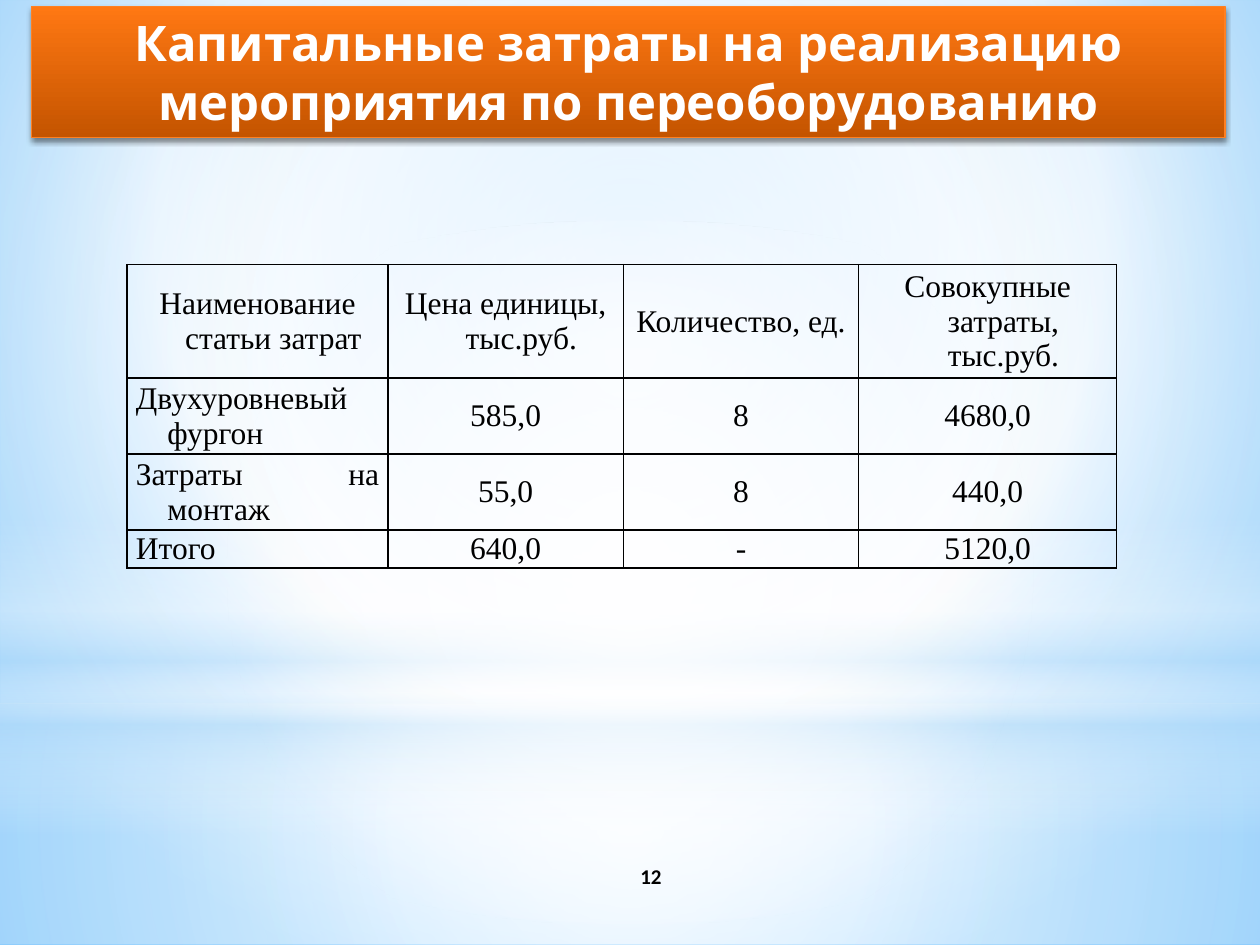
from pptx import Presentation
from pptx.dml.color import RGBColor
from pptx.enum import shapes, text
from pptx.oxml import parse_xml
from pptx.oxml.ns import nsdecls, qn
from pptx.util import Pt

BLACK = RGBColor(0, 0, 0)
WHITE = RGBColor(255, 255, 255)
ORANGE = RGBColor(0xFF, 0x80, 0x21)
FLAME = RGBColor(0xFF, 0x78, 0x13)
RUST = RGBColor(0xC4, 0x54, 0)
SKY = RGBColor(0x9E, 0xD5, 0xFF)
AZURE = RGBColor(0x5B, 0xB9, 0xFF)
PALE = RGBColor(0xB4, 0xDC, 0xFA)

TITLE = "Капитальные затраты на реализацию мероприятия по переоборудованию"
NUMBER = "12"
ROWS = [
    ("Наименование статьи затрат", "Цена единицы, тыс.руб.", "Количество, ед.",
     "Совокупные затраты, тыс.руб."),
    ("Двухуровневый фургон", "585,0", "8", "4680,0"),
    ("Затраты на монтаж", "55,0", "8", "440,0"),
    ("Итого", "640,0", "-", "5120,0"),
]
WIDTHS = (149, 134.5, 134.5, 147.5)
HEIGHTS = (64.5, 43.4, 43.4, 21.2)

DOWN = '<a:lin ang="5400000" scaled="0"/>'
RECT, OVAL = shapes.MSO_SHAPE.RECTANGLE, shapes.MSO_SHAPE.OVAL


def circle(left, top, right, low):
    return (f'<a:path path="circle"><a:fillToRect l="{left}000" t="{top}000" '
            f'r="{right}000" b="{low}000"/></a:path>')


MID = circle(50, 50, 50, 50)
# kind, box, stops (position, colour, opacity), direction
LAYERS = [
    (RECT, (0, 402, 720, 138),
     [(0, WHITE, 91), (37, WHITE, 76), (100, PALE, 79)], MID),
    (RECT, (0, 0, 720, 402),
     [(0, WHITE, 89), (48, WHITE, 62), (100, PALE, 79)], MID),
    (RECT, (0, 296.6, 720, 180),
     [(0, WHITE, 0), (29, WHITE, 30), (45, PALE, 40), (55, WHITE, 26),
      (65, PALE, 60), (100, WHITE, 0)], DOWN),
    (OVAL, (0, 126, 720, 402), [(0, WHITE, 100), (56, WHITE, 0)], MID),
]


def blend(fill, root, stops, way):
    """Give the fill found under root a gradient."""
    fill.solid()
    marks = "".join(
        f'<a:gs pos="{pos}000"><a:srgbClr val="{tone}">'
        f'<a:alpha val="{alpha}000"/></a:srgbClr></a:gs>'
        for pos, tone, alpha in stops)
    old = next(root.iter(qn("a:solidFill")))
    old.getparent().replace(old, parse_xml(
        f'<a:gradFill {nsdecls("a")} rotWithShape="1">'
        f'<a:gsLst>{marks}</a:gsLst>{way}</a:gradFill>'))


def style(para, name, size, tone, bold=False, align=text.PP_ALIGN.CENTER):
    para.alignment = align
    font = para.font
    font.name, font.size, font.bold = name, Pt(size), bold
    font.color.rgb = tone


def border(cell):
    props = cell._tc.get_or_add_tcPr()
    for spot, side in enumerate(("lnL", "lnR", "lnT", "lnB")):
        props.insert(spot, parse_xml(
            f'<a:{side} {nsdecls("a")} w="12700"><a:solidFill>'
            f'<a:srgbClr val="{BLACK}"/></a:solidFill></a:{side}>'))


def add_layers(slide):
    back = slide.background.fill
    blend(back, slide.element, [(0, SKY, 100), (60, WHITE, 100), (100, AZURE, 100)],
          circle(20, 10, 20, 60))
    for kind, box, stops, way in LAYERS:
        layer = slide.shapes.add_shape(kind, *map(Pt, box))
        layer.shadow.inherit = False
        layer.line.fill.background()
        blend(layer.fill, layer.element.spPr, stops, way)


def add_number(slide):
    box = slide.shapes.add_textbox(Pt(300), Pt(486), Pt(144), Pt(28.8))
    frame = box.text_frame
    frame.word_wrap = True
    frame.vertical_anchor = text.MSO_ANCHOR.MIDDLE
    frame.text = NUMBER
    style(frame.paragraphs[0], "Calibri", 12, BLACK, True)


def fill_title(slide):
    title = slide.shapes.title
    slide.shapes._spTree.append(title.element)  # in front of the layers
    title.left, title.top, title.width, title.height = map(Pt, (18, 3.6, 682, 75))
    props = title.element.spPr
    blend(title.fill, props, [(0, FLAME, 100), (100, RUST, 100)], DOWN)
    title.line.color.rgb = ORANGE
    title.line.width = Pt(0.75)
    title.shadow.inherit = False
    props.find(qn("a:effectLst")).append(parse_xml(
        f'<a:outerShdw {nsdecls("a")} blurRad="{Pt(3.1)}" dist="{Pt(1.8)}" '
        f'dir="5400000" rotWithShape="0"><a:srgbClr val="{BLACK}">'
        '<a:alpha val="45000"/></a:srgbClr></a:outerShdw>'))
    frame = title.text_frame
    frame.text = TITLE
    frame.word_wrap = True
    frame.auto_size = text.MSO_AUTO_SIZE.SHAPE_TO_FIT_TEXT
    frame.vertical_anchor = text.MSO_ANCHOR.TOP
    style(frame.paragraphs[0], "Karla", 28, WHITE, True)


def add_costs(slide):
    table = slide.shapes.add_table(
        len(ROWS), len(WIDTHS), Pt(72.7), Pt(151.2),
        Pt(sum(WIDTHS)), Pt(sum(HEIGHTS))).table
    table.first_row = table.horz_banding = False
    for col, width in zip(table.columns, WIDTHS):
        col.width = Pt(width)
    for row, height, words in zip(table.rows, HEIGHTS, ROWS):
        row.height = Pt(height)
        for spot, (cell, word) in enumerate(zip(row.cells, words)):
            cell.text = word
            cell.fill.background()
            cell.vertical_anchor = text.MSO_ANCHOR.MIDDLE
            cell.margin_left = cell.margin_right = Pt(5)
            cell.margin_top = cell.margin_bottom = 0
            border(cell)
            para = cell.text_frame.paragraphs[0]
            label = spot == 0 and words is not ROWS[0]
            style(para, "Times New Roman", 18, BLACK,
                  align=text.PP_ALIGN.JUSTIFY if label else text.PP_ALIGN.CENTER)
            props = para._p.get_or_add_pPr()
            props.set("marL", str(Pt(18)))
            props.set("indent", str(Pt(-18)))


def main():
    deck = Presentation()
    deck.slide_width, deck.slide_height = Pt(720), Pt(540)
    slide = deck.slides.add_slide(deck.slide_layouts[5])
    add_layers(slide)
    add_number(slide)
    fill_title(slide)
    add_costs(slide)
    deck.save("out.pptx")


if __name__ == "__main__":
    main()
